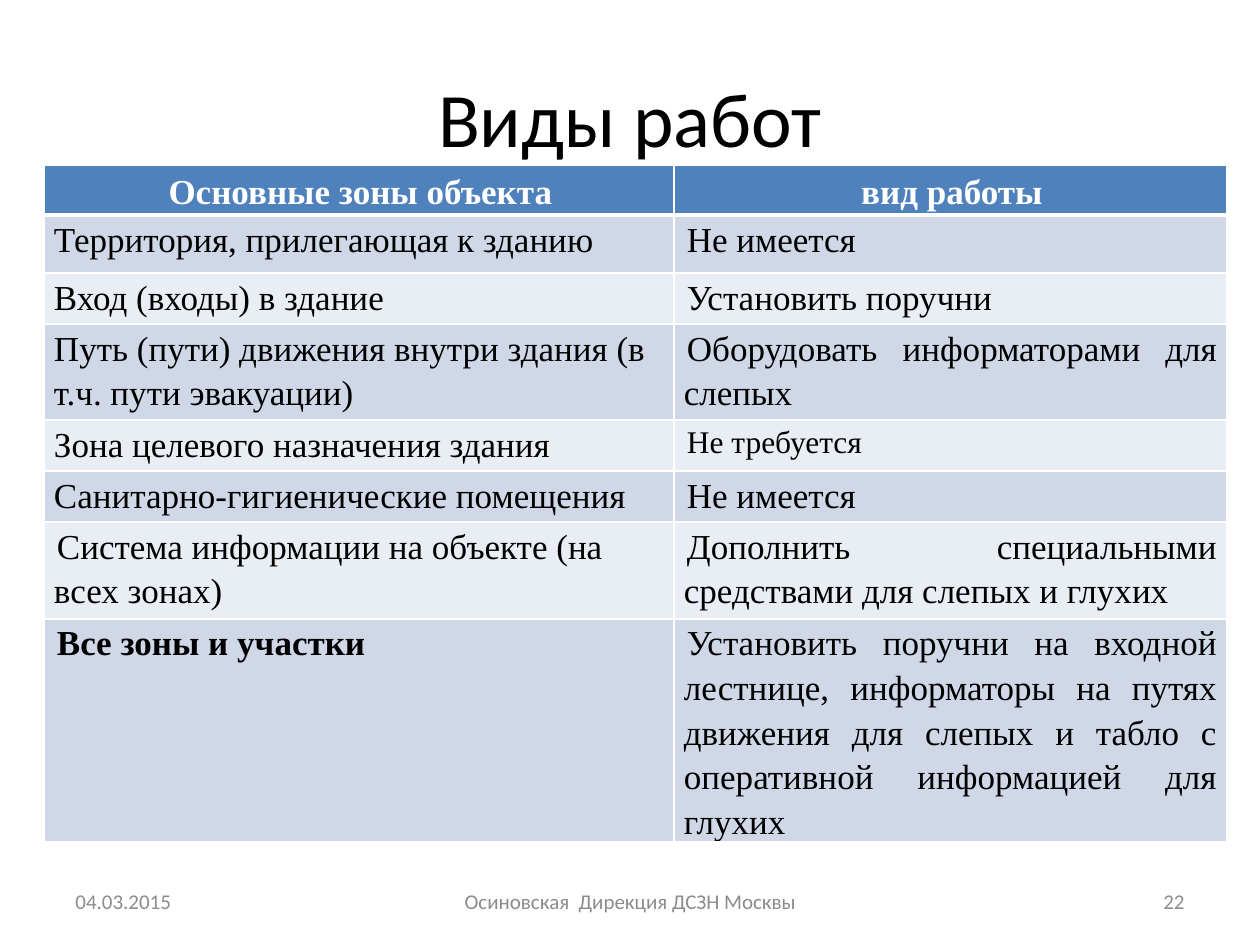
from lxml import etree
from pptx import Presentation, util as u
from pptx.dml.color import RGBColor
from pptx.enum import text
from pptx.oxml import ns

PX = 914400 // 126
LEFT, CENTER = text.PP_ALIGN.LEFT, text.PP_ALIGN.CENTER
RIGHT, JUSTIFY = text.PP_ALIGN.RIGHT, text.PP_ALIGN.JUSTIFY


def write(frame, words, font="Calibri", size=12, color="8C8C8C", bold=False,
          align=LEFT, indent=0, spacing=None):
    frame.word_wrap = True
    para = frame.paragraphs[0]
    para.alignment = align
    para.line_spacing = spacing
    if indent:
        para._p.get_or_add_pPr().set("indent", str(indent * PX))
    span = para.add_run()
    span.text = words
    span.font.name = font
    span.font.size = u.Pt(size)
    span.font.bold = bold
    span.font.color.rgb = RGBColor.from_string(color)


def add_border(cell, bottom):
    props = cell._tc.get_or_add_tcPr()
    widths = {"lnL": 1, "lnR": 1, "lnT": 1, "lnB": bottom}
    for place, (side, width) in enumerate(widths.items()):
        line = etree.Element(ns.qn("a:" + side), w=str(u.Pt(width)))
        fill = etree.SubElement(line, ns.qn("a:solidFill"))
        etree.SubElement(fill, ns.qn("a:srgbClr"), val="FFFFFF")
        props.insert(place, line)


deck = Presentation()
deck.slide_width, deck.slide_height = 1260 * PX, 945 * PX
page = deck.slides.add_slide(deck.slide_layouts[5])

title = page.shapes.title
title.left, title.top, title.width, title.height = 63 * PX, 38 * PX, 1134 * PX, 157 * PX
title.text_frame.vertical_anchor = text.MSO_ANCHOR.MIDDLE
write(title.text_frame, "Виды работ", size=44, color="000000", align=CENTER)

rows = [
    (50, "Основные зоны объекта", "вид работы"),
    (58, "Территория, прилегающая к зданию", "Не имеется"),
    (51, "Вход (входы) в здание", "Установить поручни "),
    (96, "Путь (пути) движения внутри здания (в т.ч. пути эвакуации)",
     "Оборудовать информаторами для слепых"),
    (51, "Зона целевого назначения здания", "Не требуется"),
    (51, "Санитарно-гигиенические помещения", "Не имеется"),
    (97, "Система информации на объекте (на всех зонах)",
     "Дополнить специальными средствами для слепых и глухих"),
    (223, "Все зоны и участки",
     "Установить поручни на входной лестнице, информаторы на путях движения "
     "для слепых и табло с оперативной информацией для глухих"),
]
height = sum(row[0] for row in rows)
table = page.shapes.add_table(len(rows), 2, 44 * PX, 165 * PX, 1183 * PX, height * PX).table
table.columns[0].width, table.columns[1].width = 630 * PX, 553 * PX

for r, (row_height, *entries) in enumerate(rows):
    table.rows[r].height = row_height * PX
    header = r == 0
    for c, words in enumerate(entries):
        cell = table.cell(r, c)
        cell.margin_left = cell.margin_right = 10 * PX
        cell.margin_top = cell.margin_bottom = 0
        cell.vertical_anchor = text.MSO_ANCHOR.MIDDLE if header else text.MSO_ANCHOR.TOP
        shade = "4F81BD" if header else ("E9EDF4", "D0D8E8")[r % 2]
        cell.fill.solid()
        cell.fill.fore_color.rgb = RGBColor.from_string(shade)
        add_border(cell, 3 if header else 1)
        write(cell.text_frame, words, font="Times New Roman",
              size=18 if words == "Не требуется" else 20,
              color="FFFFFF" if header else "000000",
              bold=header or words == "Все зоны и участки",
              align=CENTER if header else (LEFT, JUSTIFY)[c],
              indent=3 if header or c == 1 or r >= 6 else 0, spacing=1.15)

footers = [
    (63, 294, "04.03.2015", LEFT),
    (431, 399, "Осиновская  Дирекция ДСЗН Москвы", CENTER),
    (903, 294, "22", RIGHT),
]
for left, width, words, align in footers:
    box = page.shapes.add_textbox(left * PX, 876 * PX, width * PX, 50 * PX)
    box.text_frame.vertical_anchor = text.MSO_ANCHOR.MIDDLE
    write(box.text_frame, words, align=align)

deck.save("out.pptx")
